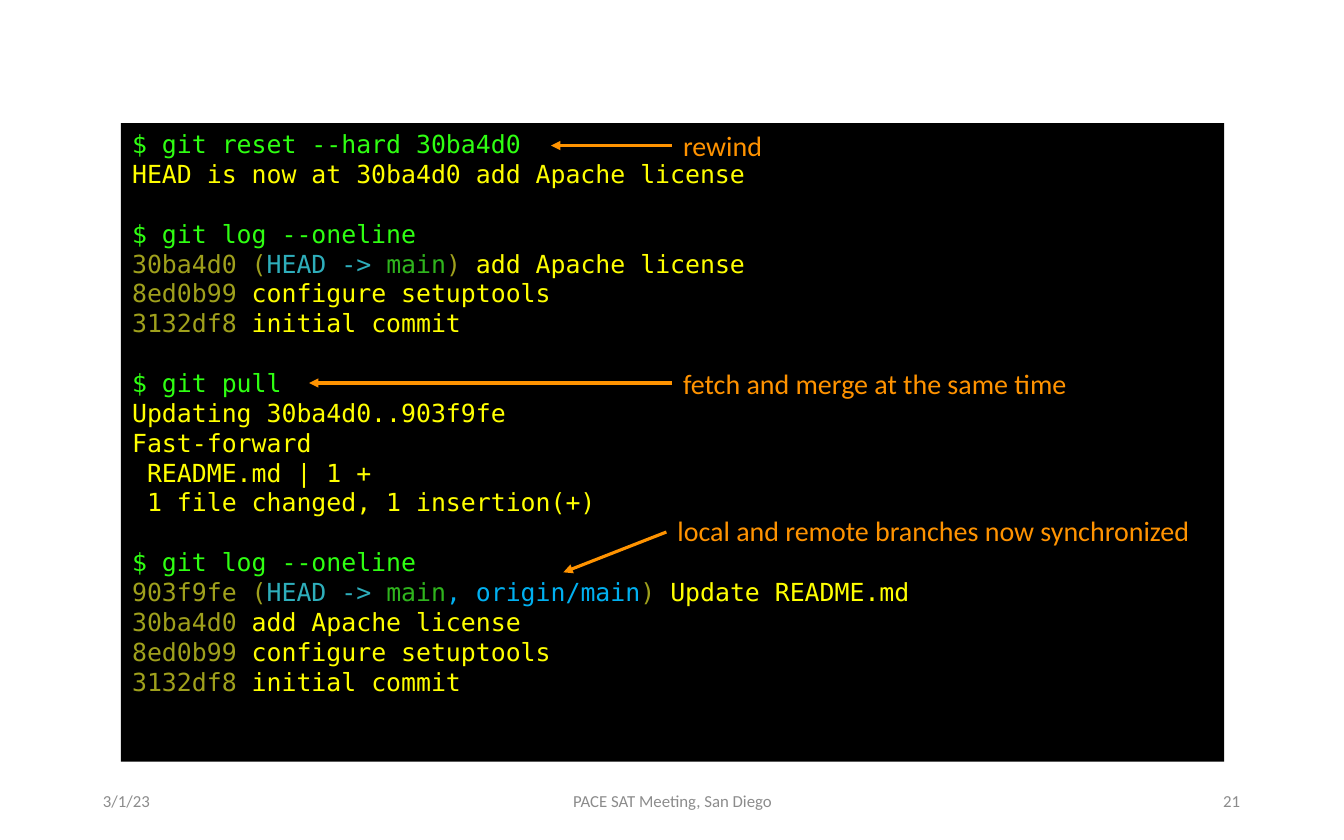
from dataclasses import dataclass

import pptx
import pptx.dml.color
import pptx.enum.shapes
import pptx.enum.text
import pptx.oxml
import pptx.oxml.ns
import pptx.util
from pptx.util import Inches, Pt

ALIGN = pptx.enum.text.PP_ALIGN
ANCHOR = pptx.enum.text.MSO_ANCHOR


@dataclass(frozen=True)
class Theme:
    sans: str = "Calibri"
    mono: str = "DejaVu Sans Mono"
    code_size: float = 16
    code_pitch: float = 19.2
    note_size: float = 18
    footer_size: float = 10.8
    arrow_width: float = 2
    terminal: str = "000000"
    command: str = "2FFF12"
    output: str = "FFFF00"
    commit: str = "9FA01C"
    head: str = "2EAEBB"
    branch: str = "2FB41D"
    remote: str = "00B0F0"
    note: str = "FF9300"
    footer: str = "8C8C8C"


THEME = Theme()


@dataclass(frozen=True)
class Span:
    text: str
    color: str


@dataclass(frozen=True)
class Note:
    text: str
    left: float
    top: float
    width: float
    arrow_y: float
    tip: tuple[float, float]


@dataclass(frozen=True)
class Footer:
    text: str
    left: float
    width: float
    align: ALIGN


Line = list[Span]


def command(text: str) -> Line:
    return [Span("$ " + text, THEME.command)]


def output(text: str) -> Line:
    return [Span(text, THEME.output)]


def commit(sha: str, message: str) -> Line:
    return [Span(sha + " ", THEME.commit), Span(message, THEME.output)]


def head_commit(sha: str, message: str, remote: str = "") -> Line:
    """Log line of the commit HEAD points to, with its branch names."""
    refs = [Span("HEAD -> ", THEME.head), Span("main", THEME.branch)]
    if remote:
        refs.append(Span(", " + remote, THEME.remote))
    return [Span(sha + " (", THEME.commit), *refs,
            Span(") ", THEME.commit), Span(message, THEME.output)]


OLDER = [commit("8ed0b99", "configure setuptools"),
         commit("3132df8", "initial commit")]

# Each block is a command followed by what it prints.
SESSION: list[list[Line]] = [
    [command("git reset --hard 30ba4d0"),
     output("HEAD is now at 30ba4d0 add Apache license")],
    [command("git log --oneline"),
     head_commit("30ba4d0", "add Apache license"), *OLDER],
    [command("git pull"),
     output("Updating 30ba4d0..903f9fe"),
     output("Fast-forward"),
     output(" README.md | 1 +"),
     output(" 1 file changed, 1 insertion(+)")],
    [command("git log --oneline"),
     head_commit("903f9fe", "Update README.md", "origin/main"),
     commit("30ba4d0", "add Apache license"), *OLDER],
]

NOTES = [
    Note("rewind", 6, 1.1, 4.92, 1.3, (4.92, 1.3)),
    Note("fetch and merge at the same time", 6, 3.22, 5.75, 3.42, (2.76, 3.42)),
    Note("local and remote branches now synchronized",
         5.95, 4.54, 4.98, 4.75, (5.03, 5.11)),
]

FOOTERS = [
    Footer("3/1/23", 0.82, 2.7, ALIGN.LEFT),
    Footer("PACE SAT Meeting, San Diego", 3.98, 4.05, ALIGN.CENTER),
    Footer("21", 8.47, 2.7, ALIGN.RIGHT),
]


def rgb(color: str) -> pptx.dml.color.RGBColor:
    return pptx.dml.color.RGBColor.from_string(color)


def add_run(p, text: str, font: str, size: float, color: str) -> None:
    r = p.add_run()
    r.text = text
    r.font.name = font
    r.font.size = Pt(size)
    r.font.color.rgb = rgb(color)


def add_text(s, left: float, top: float, width: float, text: str, size: float,
             color: str, align: ALIGN = ALIGN.LEFT, anchor: ANCHOR = ANCHOR.TOP) -> None:
    sp = s.shapes.add_textbox(Inches(left), Inches(top), Inches(width), Inches(0.4))
    tf = sp.text_frame
    tf.word_wrap = True
    tf.vertical_anchor = anchor
    p = tf.paragraphs[0]
    p.alignment = align
    add_run(p, text, THEME.sans, size, color)


def fill_terminal(sp, session: list[list[Line]]) -> None:
    sp.left, sp.top, sp.width, sp.height = map(Inches, (1.08, 1.1, 9.85, 5.7))
    sp.fill.solid()
    sp.fill.fore_color.rgb = rgb(THEME.terminal)
    tf = sp.text_frame
    tf.word_wrap = True
    tf.auto_size = pptx.enum.text.MSO_AUTO_SIZE.NONE
    tf.vertical_anchor = ANCHOR.TOP
    p = tf.paragraphs[0]
    for b, block in enumerate(session):
        for i, line in enumerate(block):
            if b or i:
                p = tf.add_paragraph()
            pPr = p._p.get_or_add_pPr()
            pPr.set("marL", "0")
            pPr.set("indent", "0")
            pPr.append(pptx.oxml.parse_xml(
                f"<a:buNone {pptx.oxml.ns.nsdecls('a')}/>"))
            p.line_spacing = Pt(THEME.code_pitch)
            p.space_before = Pt(THEME.code_pitch if b and not i else 0)
            for span in line:
                add_run(p, span.text, THEME.mono, THEME.code_size, span.color)


def add_note(s, note: Note) -> None:
    """Draw a remark and the arrow from it to the line it explains."""
    add_text(s, note.left, note.top, note.width, note.text,
             THEME.note_size, THEME.note)
    c = s.shapes.add_connector(
        pptx.enum.shapes.MSO_CONNECTOR.STRAIGHT,
        Inches(note.left), Inches(note.arrow_y), *map(Inches, note.tip))
    c.line.color.rgb = rgb(THEME.note)
    c.line.width = Pt(THEME.arrow_width)
    ns = pptx.oxml.ns.nsdecls("a")
    c.line._get_or_add_ln().append(
        pptx.oxml.parse_xml(f'<a:tailEnd {ns} type="triangle"/>'))
    c._element.spPr.append(pptx.oxml.parse_xml(f"<a:effectLst {ns}/>"))


def main() -> None:
    prs = pptx.Presentation()
    prs.slide_width, prs.slide_height = Inches(12), Inches(7.5)
    s = prs.slides.add_slide(prs.slide_layouts[1])
    title = s.shapes.title._element
    title.getparent().remove(title)
    fill_terminal(s.placeholders[1], SESSION)
    for f in FOOTERS:
        add_text(s, f.left, 6.95, f.width, f.text, THEME.footer_size,
                 THEME.footer, f.align, ANCHOR.MIDDLE)
    for note in NOTES:
        add_note(s, note)
    prs.save("out.pptx")


if __name__ == "__main__":
    main()
